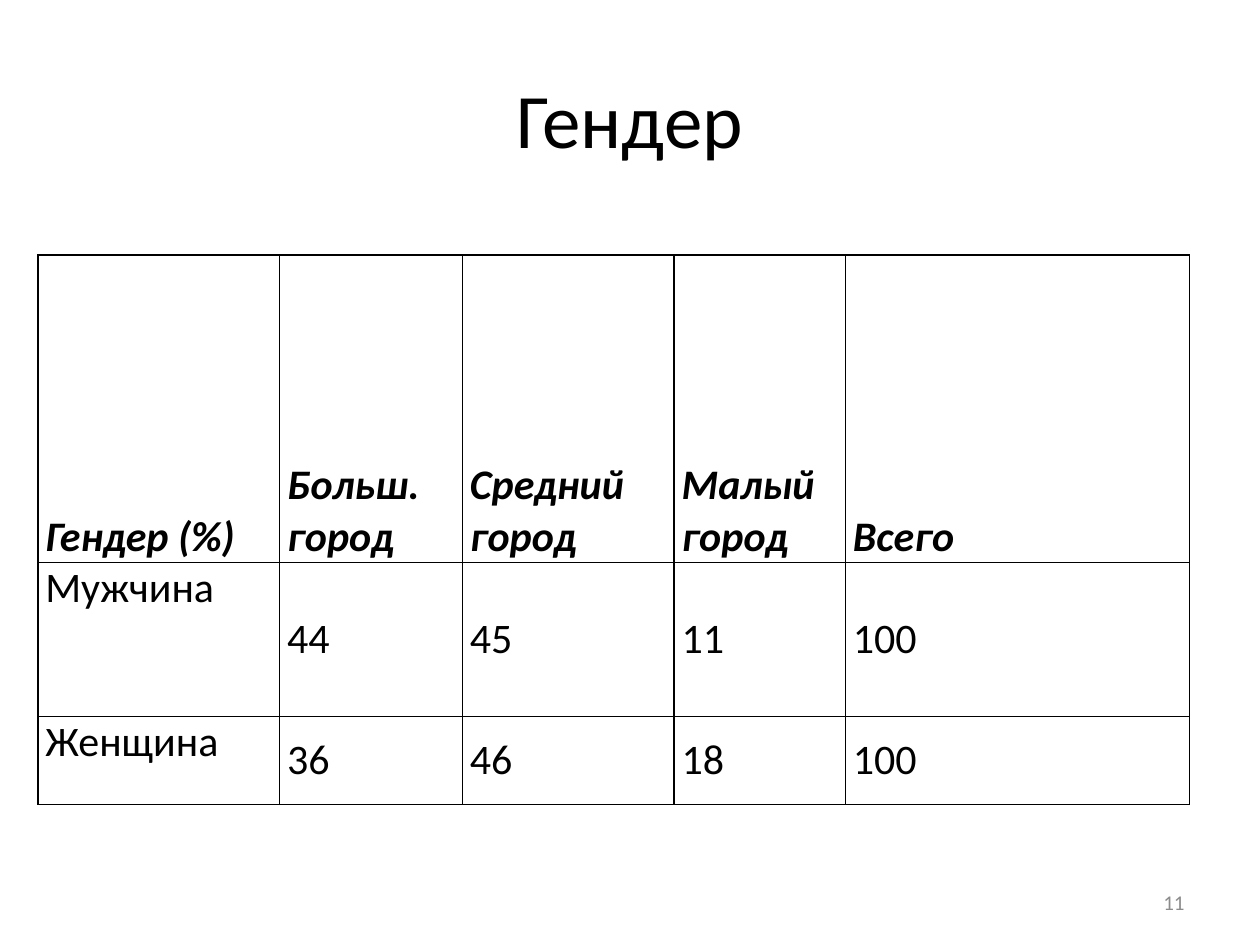
from lxml import etree
from pptx import Presentation
from pptx.dml.color import RGBColor
from pptx.enum.text import MSO_ANCHOR, PP_ALIGN
from pptx.oxml.ns import qn
from pptx.util import Inches, Pt

TOP, MIDDLE, BOTTOM = MSO_ANCHOR.TOP, MSO_ANCHOR.MIDDLE, MSO_ANCHOR.BOTTOM
CENTER, RIGHT, JUSTIFY = PP_ALIGN.CENTER, PP_ALIGN.RIGHT, PP_ALIGN.JUSTIFY
BLACK = RGBColor(0x00, 0x00, 0x00)
WHITE = RGBColor(0xFF, 0xFF, 0xFF)
GRAY = RGBColor(0x8C, 0x8C, 0x8C)

WIDTH, HEIGHT = Inches(10), Inches(7.5)
COLUMN_INCHES = (1.92, 1.45, 1.68, 1.36, 2.73)
ROW_INCHES = (2.44, 1.22, 0.7)
GENDER_SHARES = (
    ("Гендер (%)", "Больш. город", "Средний город", "Малый\nгород", "Всего"),
    ("Мужчина", "44", "45", "11", "100"),
    ("Женщина", "36", "46", "18", "100"),
)


class SlideBuilder:
    font = "Calibri"
    body_size = 24
    border_points = 1
    cell_margins = {
        "margin_left": Inches(0.06),
        "margin_right": Inches(0.06),
        "margin_top": 0,
        "margin_bottom": 0,
    }

    def __init__(self, slide):
        self.slide = slide

    def box(self, left, top, width, height):
        return (
            round(WIDTH * left),
            round(HEIGHT * top),
            round(WIDTH * width),
            round(HEIGHT * height),
        )

    def fill_text(self, frame, content, size, color, align, **emphasis):
        frame.word_wrap = True
        frame.text = content
        font_format = {"name": self.font, "size": Pt(size), **emphasis}
        for paragraph in frame.paragraphs:
            paragraph.alignment = align
            for run in paragraph.runs:
                run.font.color.rgb = color
                for attribute, setting in font_format.items():
                    setattr(run.font, attribute, setting)

    def text(self, content, area, size, color, align):
        frame = self.slide.shapes.add_textbox(*self.box(*area)).text_frame
        self.fill_text(frame, content, size, color, align)
        frame.vertical_anchor = MIDDLE

    def border(self, cell):
        properties = cell._tc.get_or_add_tcPr()
        for position, side in enumerate(("a:lnL", "a:lnR", "a:lnT", "a:lnB")):
            line = etree.Element(qn(side), w=str(Pt(self.border_points)))
            fill = etree.SubElement(line, qn("a:solidFill"))
            etree.SubElement(fill, qn("a:srgbClr"), val=str(BLACK))
            properties.insert(position, line)

    def cell(self, cell, content, is_header, is_label):
        self.fill_text(cell.text_frame, content, self.body_size, BLACK, JUSTIFY,
                       bold=is_header, italic=is_header)
        anchor = BOTTOM if is_header else TOP if is_label else MIDDLE
        for attribute, setting in {**self.cell_margins, "vertical_anchor": anchor}.items():
            setattr(cell, attribute, setting)
        cell.fill.solid()
        cell.fill.fore_color.rgb = WHITE
        self.border(cell)

    def table(self, rows, left, top, column_inches, row_inches):
        area = (left, top, Inches(sum(column_inches)) / WIDTH, Inches(sum(row_inches)) / HEIGHT)
        table = self.slide.shapes.add_table(
            len(rows), len(column_inches), *self.box(*area)
        ).table
        for column, width in zip(table.columns, column_inches):
            column.width = Inches(width)
        for row, height in zip(table.rows, row_inches):
            row.height = Inches(height)
        for row_index, row in enumerate(rows):
            for column_index, content in enumerate(row):
                self.cell(table.cell(row_index, column_index), content,
                          row_index == 0, column_index == 0)


def main():
    presentation = Presentation()
    presentation.slide_width, presentation.slide_height = WIDTH, HEIGHT
    builder = SlideBuilder(presentation.slides.add_slide(presentation.slide_layouts[6]))
    builder.text("11", (0.72, 0.93, 0.23, 0.05), 12, GRAY, RIGHT)
    builder.text("Гендер", (0.05, 0.04, 0.9, 0.17), 44, BLACK, CENTER)
    builder.table(GENDER_SHARES, 0.03, 0.27, COLUMN_INCHES, ROW_INCHES)
    presentation.save("out.pptx")


if __name__ == "__main__":
    main()
